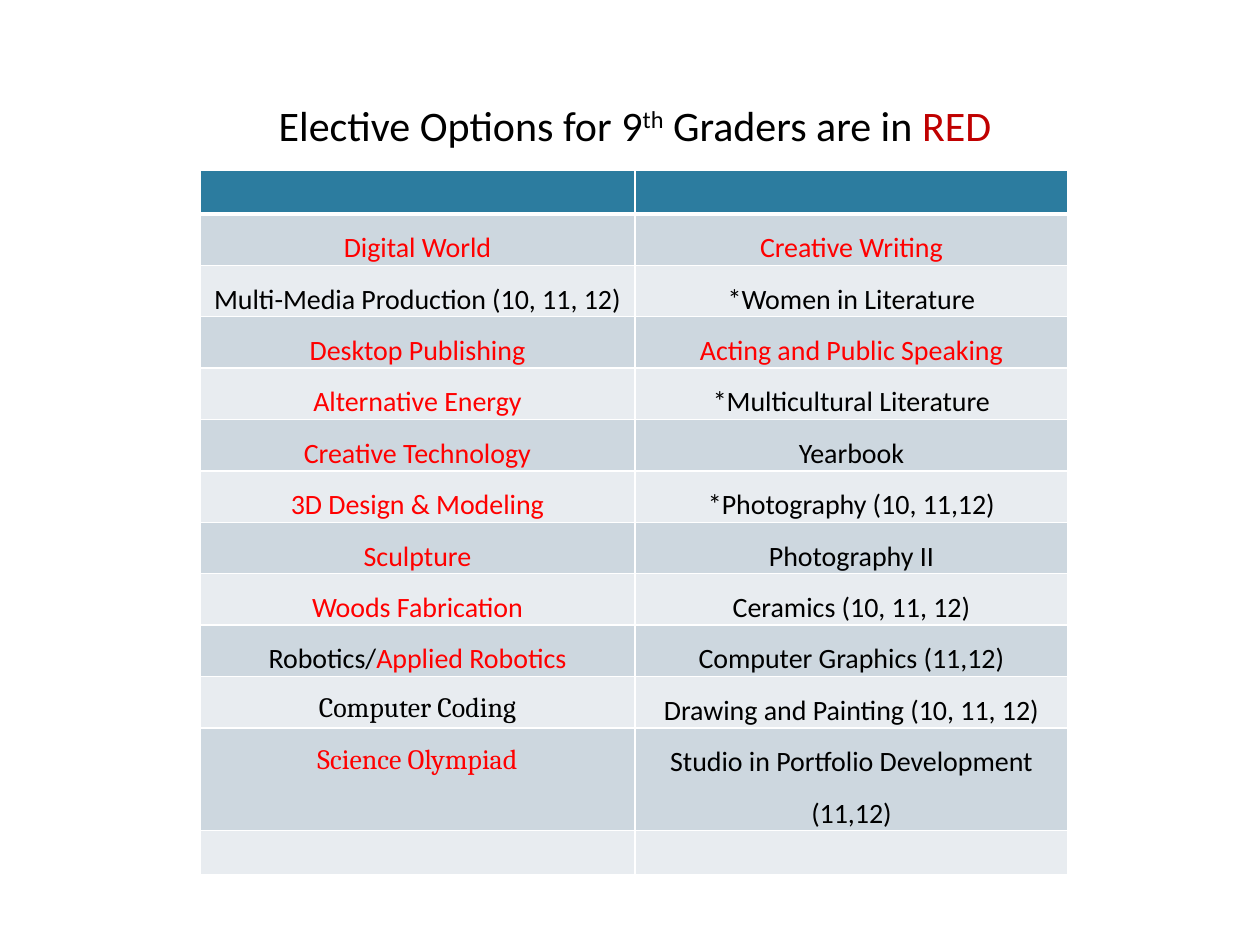
"""Build the slide that lists elective courses, with those for 9th graders in red."""
from dataclasses import dataclass

from lxml import etree
from pptx import Presentation
from pptx import util as u
from pptx.dml.color import RGBColor
from pptx.enum import text
from pptx.oxml import ns

EMU_PER_PX = 914400 / 126


def px(count):
    return u.Emu(round(count * EMU_PER_PX))


@dataclass(frozen=True)
class Theme:
    ink: str = "000000"
    open_to_ninth: str = "FF0000"
    key_word: str = "C00000"
    header: str = "2C7C9F"
    bands: tuple = ("CDD7DF", "E8ECF0")
    rule: str = "FFFFFF"
    sans: str = "Calibri"
    serif: str = "Cambria"
    title_size: int = 24
    course_size: int = 16
    rule_width: int = 1
    header_rule_width: int = 3


class SlideBuilder:
    def __init__(self, deck, theme):
        self.theme = theme
        self.slide = deck.slides.add_slide(deck.slide_layouts[6])

    def run(self, paragraph, words, size, color=None, face=None, raised=False):
        run = paragraph.add_run()
        run.text = words
        run.font.size = u.Pt(size)
        run.font.name = face or self.theme.sans
        run.font.color.rgb = RGBColor.from_string(color or self.theme.ink)
        if raised:
            run._r.get_or_add_rPr().set("baseline", "30000")

    def title(self, left, top, width, height, pieces):
        box = self.slide.shapes.add_textbox(px(left), px(top), px(width), px(height))
        frame = box.text_frame
        frame.word_wrap = True
        frame.auto_size = text.MSO_AUTO_SIZE.SHAPE_TO_FIT_TEXT
        paragraph = frame.paragraphs[0]
        paragraph.alignment = text.PP_ALIGN.CENTER
        for words, style in pieces:
            self.run(paragraph, words, self.theme.title_size, **style)

    def rules(self, cell, top, bottom):
        thin = self.theme.rule_width
        properties = cell._tc.get_or_add_tcPr()
        for side, width in (("L", thin), ("R", thin), ("T", top), ("B", bottom)):
            line = etree.SubElement(properties, ns.qn(f"a:ln{side}"), w=str(u.Pt(width)))
            solid = etree.SubElement(line, ns.qn("a:solidFill"))
            etree.SubElement(solid, ns.qn("a:srgbClr"), val=self.theme.rule)

    def cell(self, cell, row, pieces):
        theme = self.theme
        cell.margin_left = cell.margin_right = px(9)
        cell.margin_top = cell.margin_bottom = 0
        thin, thick = theme.rule_width, theme.header_rule_width
        self.rules(cell, thick if row == 1 else thin, thick if row == 0 else thin)
        cell.fill.solid()
        color = theme.bands[(row - 1) % 2] if row else theme.header
        cell.fill.fore_color.rgb = RGBColor.from_string(color)
        if pieces:
            paragraph = cell.text_frame.paragraphs[0]
            paragraph.alignment = text.PP_ALIGN.CENTER
            paragraph.line_spacing = 1.5
            for words, style in pieces:
                self.run(paragraph, words, theme.course_size, **style)

    def table(self, left, top, widths, row_height, height, rows):
        frame = self.slide.shapes.add_table(
            len(rows), len(widths), px(left), px(top),
            px(sum(widths)), px(row_height * len(rows)))
        frame.height = px(height)
        for column, width in zip(frame.table.columns, widths):
            column.width = px(width)
        for r, entries in enumerate(rows):
            for c, pieces in enumerate(entries):
                self.cell(frame.table.cell(r, c), r, pieces)


def main():
    theme = Theme()
    deck = Presentation()
    deck.slide_width, deck.slide_height = px(1260), px(945)
    builder = SlideBuilder(deck, theme)

    def upper(words, **style):
        return [(words, style)]

    def ninth(words, **style):
        return upper(words, color=theme.open_to_ninth, **style)

    blank = ([], [])
    courses = [
        (ninth("Digital World"), ninth("Creative Writing")),
        (upper("Multi-Media Production (10, 11, 12)"), upper("*Women in Literature")),
        (ninth("Desktop Publishing"), ninth("Acting and Public Speaking")),
        (ninth("Alternative Energy"), upper("*Multicultural Literature")),
        (ninth("Creative Technology"), upper("Yearbook")),
        (ninth("3D Design & Modeling"), upper("*Photography (10, 11,12)")),
        (ninth("Sculpture"), upper("Photography II")),
        (ninth("Woods Fabrication"), upper("Ceramics (10, 11, 12)")),
        (upper("Robotics/") + ninth("Applied Robotics"), upper("Computer Graphics (11,12)")),
        (upper("Computer Coding", face=theme.serif), upper("Drawing and Painting (10, 11, 12)")),
        (ninth("Science Olympiad", face=theme.serif),
         upper("Studio in Portfolio Development (11,12)")),
    ]
    builder.table(200, 170, (435, 433), 44, 693, [blank, *courses, blank])
    builder.title(165, 93, 940, 63, [
        ("Elective Options for 9", {}),
        ("th", {"raised": True}),
        (" Graders are in ", {}),
        ("RED", {"color": theme.key_word}),
    ])
    deck.save("out.pptx")


if __name__ == "__main__":
    main()
